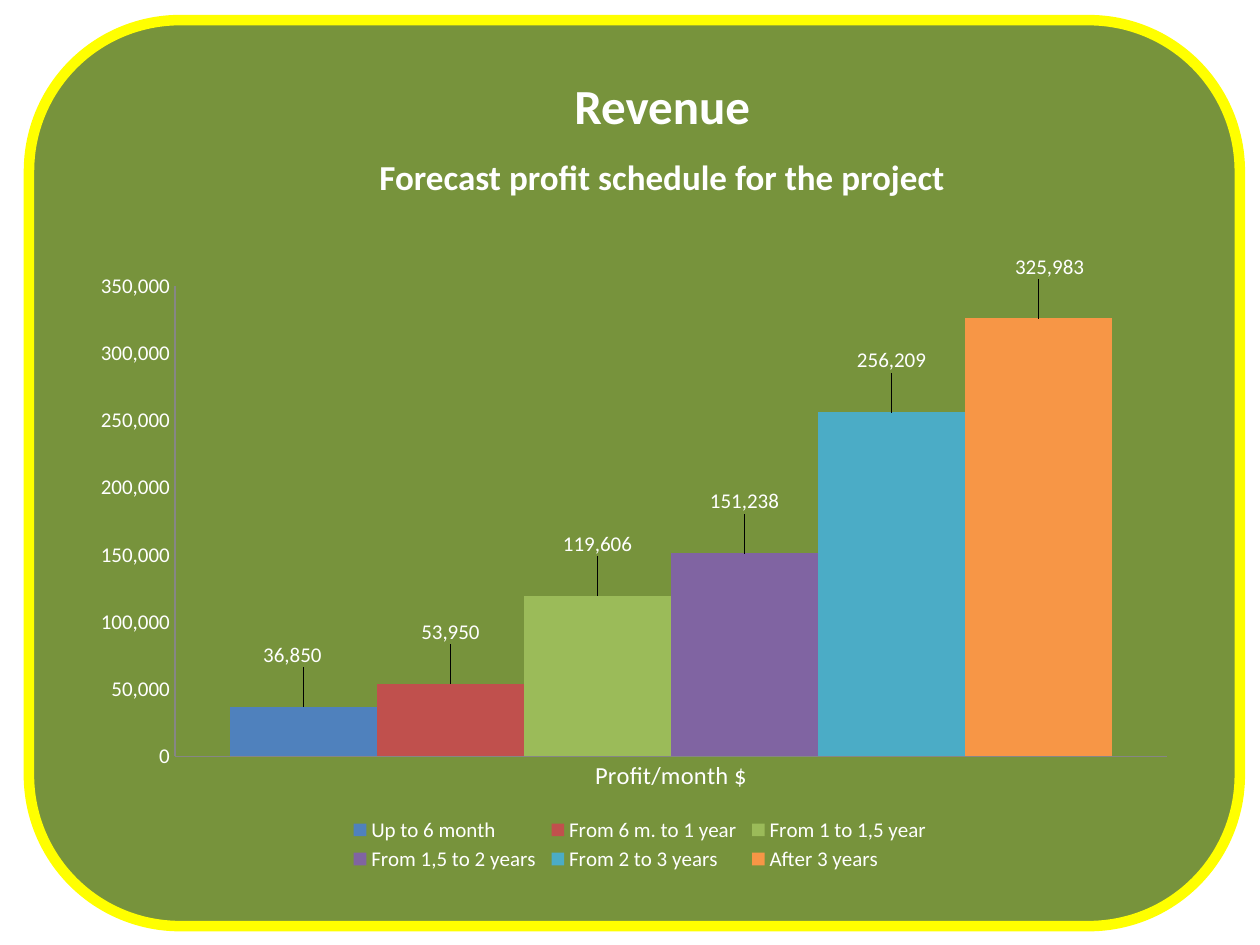
from lxml import etree
from pptx import Presentation
from pptx import util as u
from pptx.chart.data import CategoryChartData
from pptx.dml.color import RGBColor
from pptx.enum import chart as charts, shapes, text
from pptx.oxml import ns

WHITE = RGBColor(0xFF, 0xFF, 0xFF)
YELLOW = RGBColor(0xFF, 0xFF, 0x00)
OLIVE = RGBColor(0x77, 0x93, 0x3C)
AXIS_GREY = RGBColor(0x86, 0x86, 0x86)
FONT = "Calibri"
NUMBERS = "#,##0"
LABEL_RISE = -0.055

PERIODS = [
    ("Up to 6 month", 36850, RGBColor(0x4F, 0x81, 0xBD), -0.01),
    ("From 6 m. to 1 year", 53950, RGBColor(0xC0, 0x50, 0x4D), 0),
    ("From 1 to 1,5 year", 119606, RGBColor(0x9B, 0xBB, 0x59), 0),
    ("From 1,5 to 2 years", 151238, RGBColor(0x80, 0x64, 0xA2), 0),
    ("From 2 to 3 years", 256209, RGBColor(0x4B, 0xAC, 0xC6), 0),
    ("After 3 years", 325983, RGBColor(0xF7, 0x96, 0x46), 0.01),
]


def inches(*lengths):
    return [u.Inches(length) for length in lengths]


def style_font(font, size, bold=False):
    font.name = FONT
    font.size = u.Pt(size)
    font.bold = bold
    font.color.rgb = WHITE


def set_layout(parent, after, **values):
    for old in parent.findall(ns.qn("c:layout")):
        parent.remove(old)
    layout = etree.Element(ns.qn("c:layout"))
    manual = etree.SubElement(layout, ns.qn("c:manualLayout"))
    for key, value in values.items():
        etree.SubElement(manual, ns.qn("c:" + key)).set("val", str(value))
    if after is None:
        parent.insert(0, layout)
    else:
        parent.find(ns.qn(after)).addnext(layout)


def add_panel(slide):
    panel = slide.shapes.add_shape(
        shapes.MSO_SHAPE.ROUNDED_RECTANGLE, *inches(0.23, 0.16, 9.61, 7.19))
    panel.shadow.inherit = False
    panel.fill.solid()
    panel.fill.fore_color.rgb = OLIVE
    panel.line.color.rgb = YELLOW
    panel.line.width = u.Pt(6)
    slide.shapes.title._element.addprevious(panel._element)


def fill_title(title):
    title.left, title.top, title.width, title.height = inches(2.89, 0.55, 4.73, 1.08)
    frame = title.text_frame
    frame.text = "Revenue\nForecast profit schedule for the project"
    frame.word_wrap = False
    frame.auto_size = text.MSO_AUTO_SIZE.SHAPE_TO_FIT_TEXT
    frame.vertical_anchor = text.MSO_ANCHOR.TOP
    for paragraph, size in zip(frame.paragraphs, (28, 20)):
        paragraph.alignment = text.PP_ALIGN.CENTER
        paragraph.space_before = u.Pt(0)
        paragraph.space_after = u.Pt(12)
        style_font(paragraph.runs[0].font, size, bold=True)


def style_axis(axis, size):
    axis.has_major_gridlines = False
    axis.major_tick_mark = charts.XL_TICK_MARK.NONE
    axis.minor_tick_mark = charts.XL_TICK_MARK.NONE
    axis.format.line.color.rgb = AXIS_GREY
    style_font(axis.tick_labels.font, size)


def style_bar(series, color, shift):
    series.format.fill.solid()
    series.format.fill.fore_color.rgb = color
    series.invert_if_negative = False
    labels = series.data_labels
    labels.show_value = True
    labels.number_format = NUMBERS
    labels.number_format_is_linked = False
    style_font(labels.font, 12)
    point_label = series.points[0].data_label
    style_font(point_label.font, 12)
    point_label.position = charts.XL_LABEL_POSITION.OUTSIDE_END
    set_layout(labels._element.find(ns.qn("c:dLbl")), "c:idx", x=shift, y=LABEL_RISE)


def add_profit_chart(slide):
    data = CategoryChartData(number_format=NUMBERS)
    data.categories = ["Profit/month $"]
    for name, profit, _, _ in PERIODS:
        data.add_series(name, [profit])
    chart = slide.shapes.add_chart(
        charts.XL_CHART_TYPE.COLUMN_CLUSTERED, *inches(0.62, 2, 8.83, 4.95), data).chart
    chart.has_title = False
    chart.font.name = FONT
    chart.font.size = u.Pt(10)
    style_axis(chart.category_axis, 14)
    style_axis(chart.value_axis, 12)
    chart.value_axis.minimum_scale = 0
    chart.value_axis.maximum_scale = 350000
    chart.value_axis.major_unit = 50000
    chart.value_axis.tick_labels.number_format = NUMBERS
    chart.value_axis.tick_labels.number_format_is_linked = False

    plot = chart.plots[0]
    plot.gap_width = 75
    plot.overlap = 0
    plot.vary_by_categories = False
    for series, (_, _, color, shift) in zip(plot.series, PERIODS):
        style_bar(series, color, shift)

    chart.has_legend = True
    chart.legend.position = charts.XL_LEGEND_POSITION.BOTTOM
    chart.legend.include_in_layout = False
    style_font(chart.legend.font, 12)
    set_layout(chart.legend._element, "c:legendPos",
               xMode="edge", yMode="edge", x=0.24, y=0.9, w=0.53, h=0.1)
    plot_area = chart._chartSpace.find(".//" + ns.qn("c:plotArea"))
    set_layout(plot_area, None, layoutTarget="inner",
               xMode="edge", yMode="edge", x=0.087, y=0.055, w=0.892, h=0.754)


def main():
    deck = Presentation()
    deck.slide_width, deck.slide_height = inches(10, 7.5)
    slide = deck.slides.add_slide(deck.slide_layouts[5])
    add_panel(slide)
    fill_title(slide.shapes.title)
    add_profit_chart(slide)
    deck.save("out.pptx")


if __name__ == "__main__":
    main()
